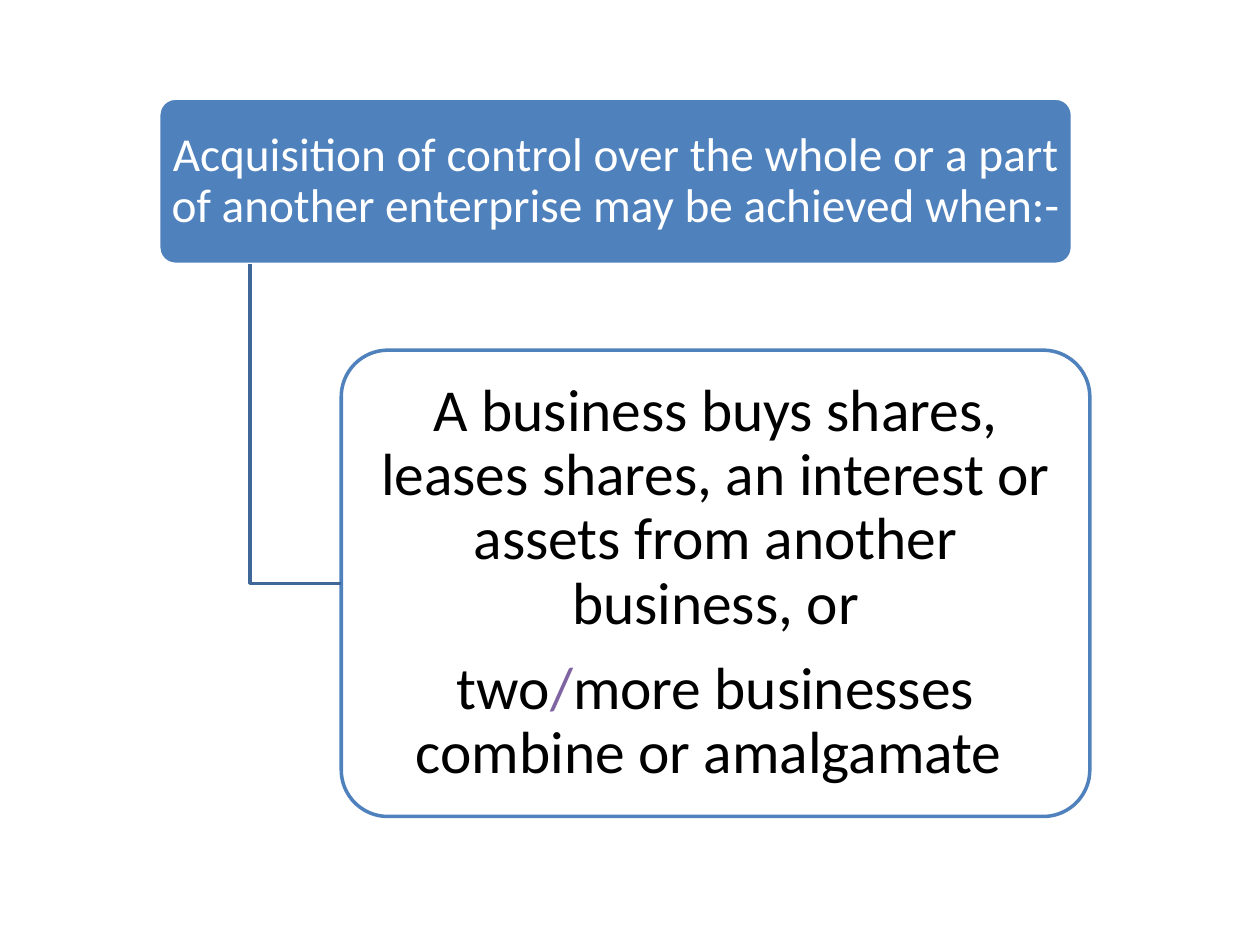
import pptx
import pptx.dml.color
import pptx.enum.shapes
import pptx.enum.text
import pptx.oxml.ns
import pptx.util
from lxml import etree

Cm, Pt = pptx.util.Cm, pptx.util.Pt

COLORS = {
    "blue": "4F81BD",
    "link": "3F6797",
    "white": "FFFFFF",
    "black": "000000",
    "accent": "8064A2",
}


def rgb(name):
    return pptx.dml.color.RGBColor.from_string(COLORS[name])


class HierarchySlide:
    font_name = "Calibri"
    line_width = Pt(2)
    corner = 0.1

    def __init__(self, presentation):
        self.slide = presentation.slides.add_slide(presentation.slide_layouts[6])

    def outline(self, shape, color):
        shape.shadow.inherit = False
        shape.line.color.rgb = rgb(color)
        shape.line.width = self.line_width

    def box(self, left, top, width, height, fill, line, opacity=100):
        """Add a rounded box; opacity is in percent."""
        box = self.slide.shapes.add_shape(
            pptx.enum.shapes.MSO_SHAPE.ROUNDED_RECTANGLE,
            Cm(left), Cm(top), Cm(width), Cm(height))
        box.adjustments[0] = self.corner
        box.fill.solid()
        box.fill.fore_color.rgb = rgb(fill)
        if opacity < 100:
            qn = pptx.oxml.ns.qn
            color = box.fill._xPr.find(qn("a:solidFill")).find(qn("a:srgbClr"))
            etree.SubElement(color, qn("a:alpha"), val=str(opacity * 1000))
        self.outline(box, line)
        return box

    def text(self, box, paragraphs, size, space_after, inset_x, inset_y):
        """Fill a box; each paragraph is a list of (words, color) runs."""
        frame = box.text_frame
        frame_format = {
            "word_wrap": True,
            "vertical_anchor": pptx.enum.text.MSO_ANCHOR.MIDDLE,
            "margin_left": Cm(inset_x), "margin_right": Cm(inset_x),
            "margin_top": Cm(inset_y), "margin_bottom": Cm(inset_y),
        }
        for name, value in frame_format.items():
            setattr(frame, name, value)
        paragraph_format = {
            "alignment": pptx.enum.text.PP_ALIGN.CENTER,
            "line_spacing": 0.9,
            "space_after": Pt(space_after),
        }
        for index, runs in enumerate(paragraphs):
            paragraph = frame.add_paragraph() if index else frame.paragraphs[0]
            for name, value in paragraph_format.items():
                setattr(paragraph, name, value)
            for words, color in runs:
                run = paragraph.add_run()
                run.text = words
                run.font.name = self.font_name
                run.font.size = Pt(size)
                run.font.color.rgb = rgb(color)

    def elbow(self, parent, child, color):
        """Link a point one tenth along the parent's base to the child's left side."""
        x = parent.left + parent.width // 10
        base = parent.top + parent.height
        middle = child.top + child.height // 2
        builder = self.slide.shapes.build_freeform(x, base)
        builder.add_line_segments([(x, middle), (child.left, middle)], close=False)
        link = builder.convert_to_shape()
        link.fill.background()
        self.outline(link, color)


def main():
    presentation = pptx.Presentation()
    presentation.slide_width = Cm(25.4)
    presentation.slide_height = Cm(19.05)
    page = HierarchySlide(presentation)

    # Heading
    heading = page.box(3.2, 1.98, 18.42, 3.35, "blue", "white")
    page.text(heading, [[
        ("Acquisition of control over the whole or a part of another "
         "enterprise may be achieved when:-", "white")]],
        size=27, space_after=9.5, inset_x=0.15, inset_y=0.1)

    # Ways of gaining control
    ways = page.box(6.88, 7.06, 15.09, 9.4, "white", "blue", opacity=90)
    page.text(ways, [
        [("A business buys shares, leases shares, an interest or assets "
          "from another business, or", "black")],
        [("two", "black"), ("/", "accent"),
         ("more businesses combine or amalgamate ", "black")]],
        size=34, space_after=12, inset_x=0.18, inset_y=0.12)

    # Link between the two
    page.elbow(heading, ways, "link")

    presentation.save("out.pptx")


if __name__ == "__main__":
    main()
